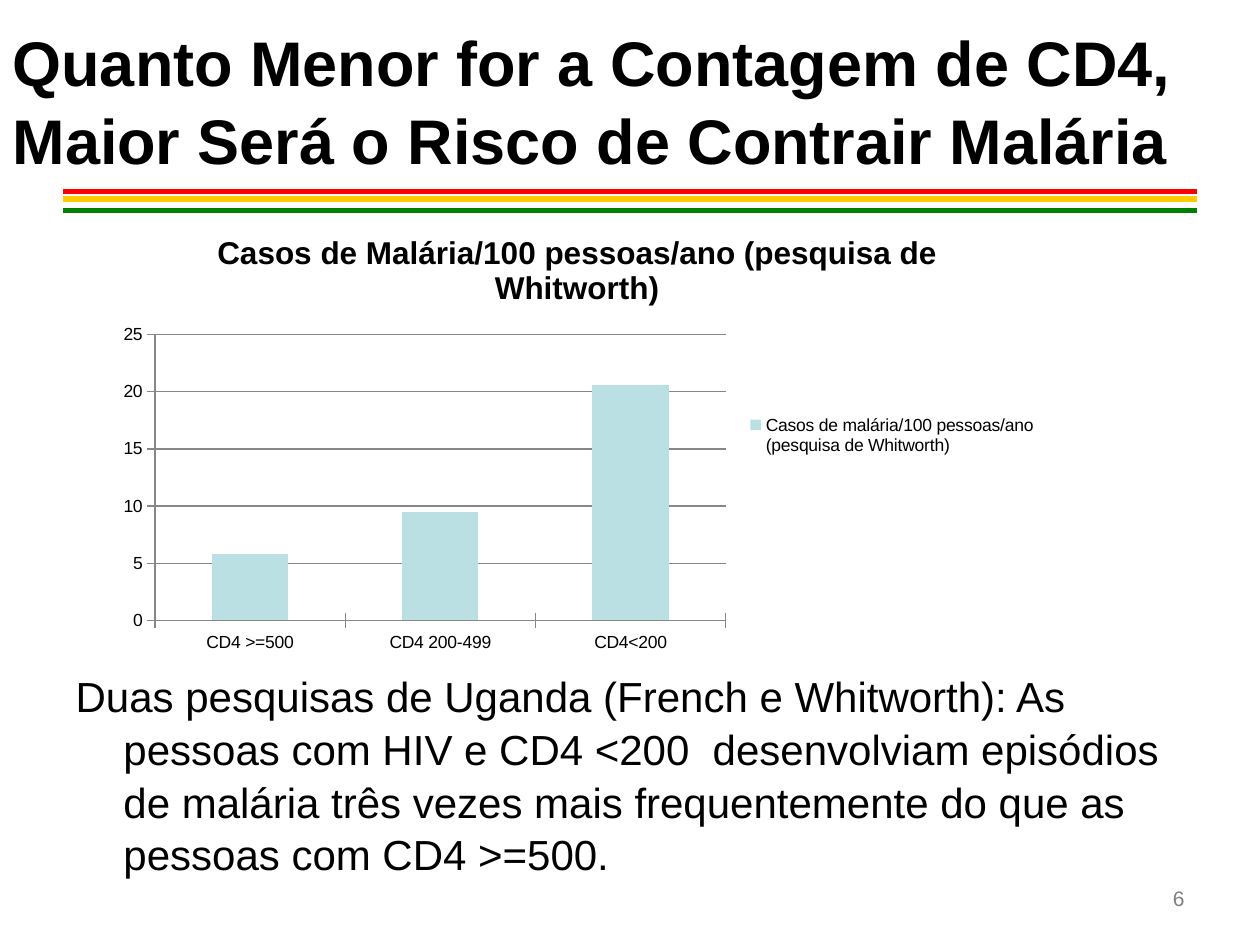
from lxml.etree import SubElement
from pptx import Presentation
from pptx.chart.data import CategoryChartData
from pptx.dml.color import RGBColor
from pptx.enum.chart import XL_CHART_TYPE, XL_LEGEND_POSITION, XL_TICK_MARK
from pptx.enum.shapes import MSO_CONNECTOR
from pptx.enum.text import MSO_ANCHOR, MSO_AUTO_SIZE, PP_ALIGN
from pptx.oxml.ns import qn
from pptx.util import Inches, Pt

FONT = "Arial"
COLORS = {
    "text": "000000",
    "number": "808080",
    "axis": "878787",
    "bar": "BBE0E3",
    "red": "FF0000",
    "yellow": "FFCC00",
    "green": "008000",
}


def color(name):
    return RGBColor.from_string(COLORS[name])


def style_font(font, size, name="text", bold=False):
    font.name = FONT
    font.size = Pt(size)
    font.bold = bold
    font.color.rgb = color(name)


def place(shape, left, top, width, height):
    shape.left, shape.top = Inches(left), Inches(top)
    shape.width, shape.height = Inches(width), Inches(height)


def write(shape, text, size, align, anchor=MSO_ANCHOR.TOP, name="text", bold=False):
    frame = shape.text_frame
    frame.word_wrap = True
    frame.auto_size = MSO_AUTO_SIZE.NONE
    frame.vertical_anchor = anchor
    para = frame.paragraphs[0]
    para.alignment = align
    span = para.add_run()
    span.text = text
    style_font(span.font, size, name, bold)
    return para


def add_stripes(page, left, top, width):
    for name, offset in (("yellow", 0.06), ("red", 0), ("green", 0.15)):
        y = Inches(top + offset)
        stripe = page.shapes.add_connector(
            MSO_CONNECTOR.STRAIGHT, Inches(left), y, Inches(left + width), y)
        stripe.line.color.rgb = color(name)
        stripe.line.width = Pt(3)
        SubElement(stripe.line._get_or_add_ln().getparent(), qn("a:effectLst"))


def add_title(page, *box):
    title = page.shapes.title
    place(title, *box)
    para = write(title, "Quanto Menor for a Contagem de CD4, Maior Será o Risco de Contrair Malária",
                 36, PP_ALIGN.LEFT, MSO_ANCHOR.MIDDLE, bold=True)
    para.line_spacing = 1.03


def add_finding(page, *box):
    body = page.placeholders[1]
    place(body, *box)
    para = write(body, "Duas pesquisas de Uganda (French e Whitworth): As pessoas com HIV e "
                 "CD4 <200  desenvolviam episódios de malária três vezes mais "
                 "frequentemente do que as pessoas com CD4 >=500.", 24, PP_ALIGN.LEFT)
    properties = para._p.get_or_add_pPr()
    properties.set("marL", str(Inches(0.38)))
    properties.set("indent", str(Inches(-0.38)))
    SubElement(properties, qn("a:buNone"))
    para.space_before = Pt(0)
    para.line_spacing = 1.05


def add_page_number(page, *box):
    number = page.shapes.add_textbox(*map(Inches, box))
    write(number, "6", 12, PP_ALIGN.RIGHT, name="number")


def add_cases_chart(page, *box):
    data = CategoryChartData()
    data.categories = ["CD4 >=500", "CD4 200-499", "CD4<200"]
    data.add_series("Casos de malária/100 pessoas/ano (pesquisa de Whitworth)", (5.8, 9.5, 20.6))
    chart = page.shapes.add_chart(
        XL_CHART_TYPE.COLUMN_CLUSTERED, *map(Inches, box), data).chart
    style_font(chart.font, 10)

    chart.has_title = True
    span = chart.chart_title.text_frame.paragraphs[0].add_run()
    span.text = "Casos de Malária/100 pessoas/ano (pesquisa de Whitworth)"
    style_font(span.font, 18, bold=True)
    chart.chart_title.include_in_layout = False

    chart.has_legend = True
    chart.legend.position = XL_LEGEND_POSITION.RIGHT
    chart.legend.include_in_layout = False

    plot = chart.plots[0]
    plot.vary_by_categories = False
    plot.gap_width = 150
    fill = plot.series[0].format.fill
    fill.solid()
    fill.fore_color.rgb = color("bar")

    values = chart.value_axis
    values.minimum_scale, values.maximum_scale, values.major_unit = 0, 25, 5
    values.has_major_gridlines = True
    for axis in (chart.category_axis, values):
        axis.major_tick_mark = XL_TICK_MARK.CROSS
    for part in (chart.category_axis, values, values.major_gridlines):
        part.format.line.color.rgb = color("axis")
        part.format.line.width = Pt(0.75)


def main():
    deck = Presentation()
    deck.slide_width, deck.slide_height = Inches(10), Inches(7.5)
    page = deck.slides.add_slide(deck.slide_layouts[1])
    add_stripes(page, 0.5, 1.52, 9)
    add_page_number(page, 8.33, 6.98, 1.17, 0.52)
    add_title(page, 0, 0, 9.5, 1.58)
    add_finding(page, 0.5, 5.25, 9.17, 1.67)
    add_cases_chart(page, 0.83, 1.67, 7.5, 3.58)
    deck.save("out.pptx")


if __name__ == "__main__":
    main()
